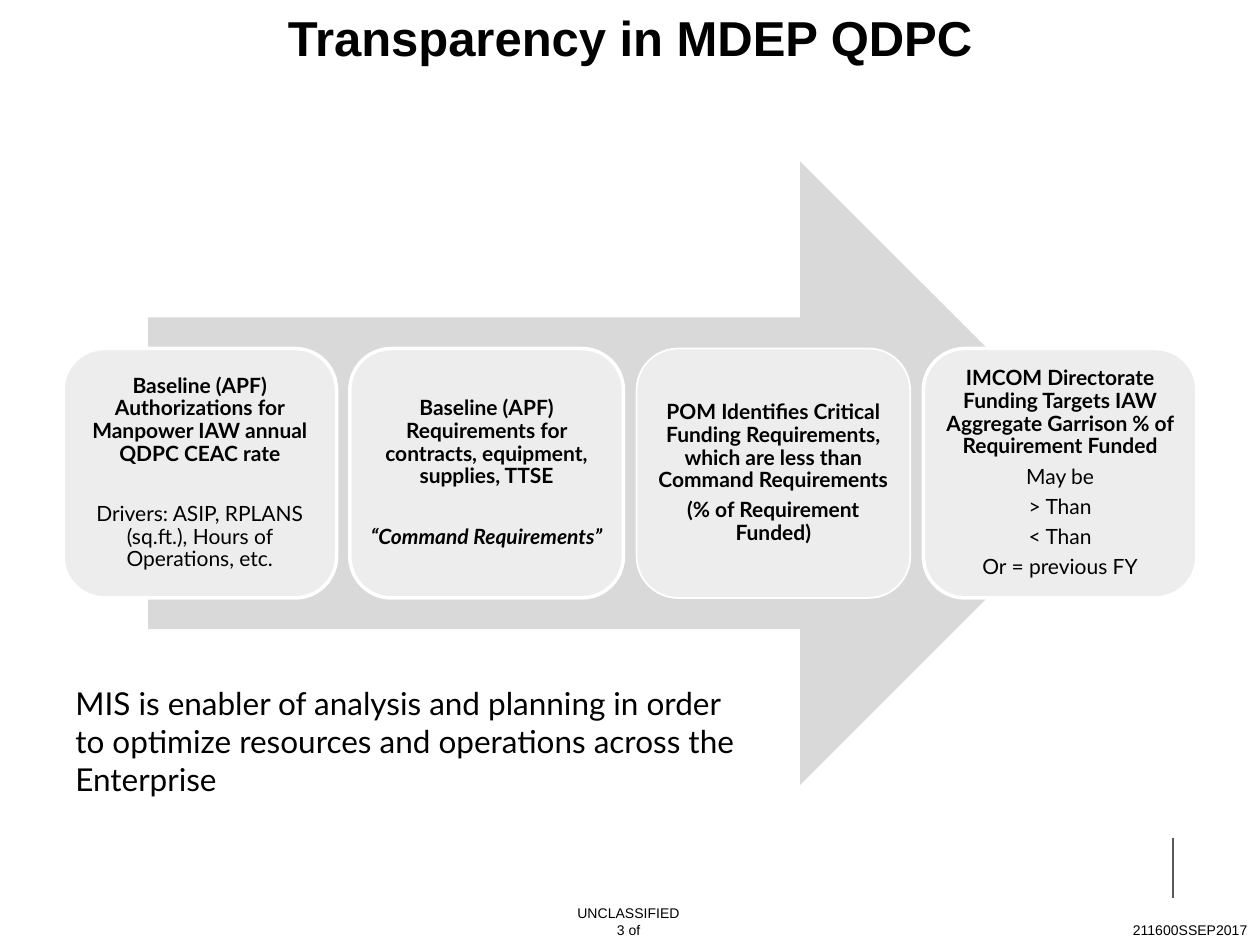
from lxml.etree import SubElement
from pptx import Presentation
from pptx.dml.color import RGBColor
from pptx.enum.shapes import MSO_CONNECTOR, MSO_SHAPE
from pptx.enum.text import MSO_ANCHOR, MSO_AUTO_SIZE, PP_ALIGN
from pptx.oxml.ns import qn
from pptx.util import Pt

BLACK = RGBColor(0x00, 0x00, 0x00)
WHITE = RGBColor(0xFF, 0xFF, 0xFF)
ARROW_GRAY = RGBColor(0xD9, 0xD9, 0xD9)
STEP_GRAY = RGBColor(0xED, 0xED, 0xED)
RULE_GRAY = RGBColor(0x59, 0x59, 0x59)

STEP_GAP = 4.2  # 35% of the 12 pt step text
SECTION_GAP = 21.4  # a step gap plus one empty line

# Each step: outline weight, then (text, bold, italic, space after) paragraphs
STEPS = [
    (2, [("Baseline (APF) Authorizations for Manpower IAW annual QDPC CEAC rate",
          True, False, SECTION_GAP),
         ("Drivers: ASIP, RPLANS (sq.ft.), Hours of Operations, etc.",
          False, False, STEP_GAP)]),
    (2, [("Baseline (APF) Requirements for contracts, equipment, supplies, TTSE",
          True, False, SECTION_GAP),
         ("“Command Requirements”", True, True, STEP_GAP)]),
    (1, [("POM Identifies Critical Funding Requirements, which are less than "
          "Command Requirements", True, False, STEP_GAP),
         ("(% of Requirement Funded)", True, False, STEP_GAP)]),
    (2, [("IMCOM Directorate Funding Targets IAW Aggregate Garrison % of "
          "Requirement Funded", True, False, STEP_GAP),
         ("May be", False, False, STEP_GAP),
         ("> Than", False, False, STEP_GAP),
         ("< Than", False, False, STEP_GAP),
         ("Or = previous FY", False, False, STEP_GAP)]),
]


def write(frame, text, *, size, font="Arial", bold=False, italic=False,
          align=PP_ALIGN.LEFT, line_spacing=None, space_after=0):
    """Add a formatted paragraph, using the frame's first one if still empty."""
    first = frame.paragraphs[0]
    paragraph = frame.add_paragraph() if first.runs else first
    paragraph.alignment = align
    paragraph.line_spacing = line_spacing
    paragraph.space_before = Pt(0)
    paragraph.space_after = Pt(space_after)
    run = paragraph.add_run()
    run.text = text
    run.font.name = font
    run.font.size = Pt(size)
    run.font.bold = bold
    run.font.italic = italic
    run.font.color.rgb = BLACK


def add_text(slide, box, lines, **text_format):
    frame = slide.shapes.add_textbox(*map(Pt, box)).text_frame
    frame.word_wrap = True
    frame.auto_size = MSO_AUTO_SIZE.SHAPE_TO_FIT_TEXT
    for line in lines:
        write(frame, line, **text_format)


def add_filled_shape(slide, preset, box, color):
    shape = slide.shapes.add_shape(preset, *map(Pt, box))
    shape.shadow.inherit = False
    shape.fill.solid()
    shape.fill.fore_color.rgb = color
    return shape


def place_title(slide, box):
    title = slide.shapes.title
    title.left, title.top, title.width, title.height = map(Pt, box)
    frame = title.text_frame
    frame.word_wrap = True
    frame.auto_size = MSO_AUTO_SIZE.NONE
    frame.vertical_anchor = MSO_ANCHOR.TOP
    write(frame, "Transparency in MDEP QDPC", size=28, bold=True,
          align=PP_ALIGN.CENTER)


def place_step(slide, box, outline_weight, paragraphs):
    step = add_filled_shape(slide, MSO_SHAPE.ROUNDED_RECTANGLE, box, STEP_GRAY)
    step.line.color.rgb = WHITE
    step.line.width = Pt(outline_weight)
    frame = step.text_frame
    frame.word_wrap = True
    frame.vertical_anchor = MSO_ANCHOR.MIDDLE
    frame.margin_left = frame.margin_right = Pt(3.6)
    frame.margin_top = frame.margin_bottom = Pt(3.6)
    for text, bold, italic, space_after in paragraphs:
        write(frame, text, size=12, font="Lato", bold=bold, italic=italic,
              align=PP_ALIGN.CENTER, line_spacing=0.9, space_after=space_after)


def place_process(slide, box):
    """Arrow behind a row of evenly spaced steps at mid-height of the box."""
    left, top, width, height = box
    arrow_width = width * 0.85
    arrow_left = left + (width - arrow_width) / 2
    arrow = add_filled_shape(slide, MSO_SHAPE.RIGHT_ARROW,
                             (arrow_left, top, arrow_width, height), ARROW_GRAY)
    arrow.line.fill.background()

    step_width, step_height = 156.4, height * 0.4
    pitch = (width - step_width) / (len(STEPS) - 1)
    step_top = top + (height - step_height) / 2
    for index, (outline_weight, paragraphs) in enumerate(STEPS):
        step_box = (left + index * pitch, step_top, step_width, step_height)
        place_step(slide, step_box, outline_weight, paragraphs)


def place_footer(slide, box):
    left, top, width, height = box
    text_width = 188.8
    add_text(slide, (left + (width - text_width) / 2 - 0.8, top, text_width, height),
             ["UNCLASSIFIED", "3 of"], size=8, align=PP_ALIGN.CENTER)
    add_text(slide, (left + width - text_width, top + 9.8, text_width, 17),
             ["211600SSEP2017"], size=8, align=PP_ALIGN.RIGHT)

    rule_x = left + width - 49.7
    rule = slide.shapes.add_connector(
        MSO_CONNECTOR.STRAIGHT, Pt(rule_x), Pt(top - 34.6), Pt(rule_x), Pt(top))
    rule.line.color.rgb = RULE_GRAY
    rule.line.width = Pt(0.75)
    SubElement(rule._element.spPr, qn("a:effectLst"))


def main():
    presentation = Presentation()
    presentation.slide_width, presentation.slide_height = Pt(720), Pt(540)
    slide = presentation.slides.add_slide(presentation.slide_layouts[5])
    place_footer(slide, (0, 513.4, 720, 26.6))
    place_process(slide, (36, 92.2, 648, 356.4))
    add_text(slide, (36, 387.4, 396, 72.7),
             ["MIS is enabler of analysis and planning in order to optimize "
              "resources and operations across the Enterprise"],
             size=18, font="Lato")
    place_title(slide, (0, 0.7, 720, 63.4))
    presentation.save("out.pptx")


if __name__ == "__main__":
    main()
